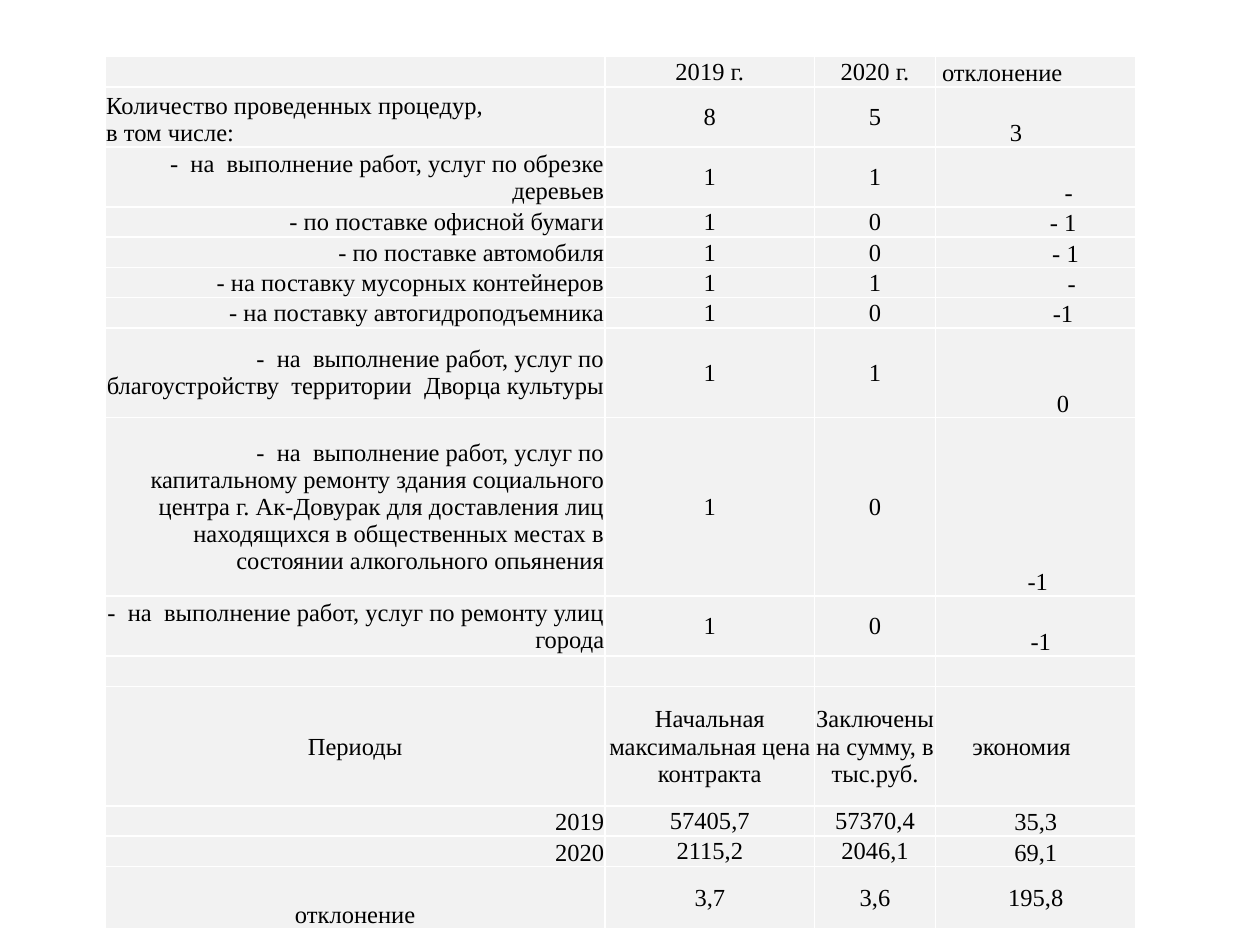
"""Build a slide with one table of procurement figures for 2019 and 2020."""
from lxml import etree
from pptx import Presentation
from pptx.dml.color import RGBColor
from pptx.enum.text import MSO_ANCHOR, PP_ALIGN
from pptx.oxml.ns import qn
from pptx.util import Cm, Pt

LEFT, MID, RIGHT = PP_ALIGN.LEFT, PP_ALIGN.CENTER, PP_ALIGN.RIGHT
CORE, BASE = MSO_ANCHOR.MIDDLE, MSO_ANCHOR.BOTTOM

THEME = {
    "fill": RGBColor.from_string("F2F2F2"),
    "ink": RGBColor.from_string("000000"),
    "rule": "FFFFFF",
    "font": {"name": "Times New Roman", "size": Pt(14), "bold": False},
}
INSET = 0.02
WIDTHS = [10.08, 4.22, 2.44, 4.04]
FORMAT = {
    "margin_right": Cm(INSET),
    "margin_top": Cm(INSET),
    "margin_bottom": Cm(0),
}

ROWS = [
    (0.61, ("", LEFT, CORE), "2019 г.", "2020 г.", ("отклонение", LEFT, BASE, 0.13)),
    (1.21, ("Количество проведенных процедур,\vв том числе:", LEFT, BASE),
     "8", "5", ("3", LEFT, BASE, 1.5)),
    (1.21, ("-  на  выполнение работ, услуг по обрезке деревьев", RIGHT, CORE),
     "1", "1", ("-", MID, BASE, 1.35)),
    (0.61, ("- по поставке офисной бумаги", RIGHT, CORE),
     "1", "0", ("- 1", MID, BASE, 1.12)),
    (0.61, ("- по поставке автомобиля", RIGHT, CORE),
     "1", "0", ("- 1", MID, BASE, 1.22)),
    (0.61, ("- на поставку мусорных контейнеров", RIGHT, CORE),
     "1", "1", ("-", MID, BASE, 1.47)),
    (0.61, ("- на поставку автогидроподъемника", RIGHT, CORE),
     "1", "0", ("-1", MID, BASE, 1.12)),
    (1.8, ("-  на  выполнение работ, услуг по благоустройству  территории  "
           "Дворца культуры", RIGHT, CORE),
     "1", "1", ("0", MID, BASE, 1.12)),
    (3.6, ("-  на  выполнение работ, услуг по капитальному ремонту здания "
           "социального центра г. Ак-Довурак для доставления лиц находящихся "
           "в общественных местах в состоянии алкогольного опьянения", RIGHT, CORE),
     "1", "0", ("-1", MID, BASE, 0.1)),
    (1.21, ("-  на  выполнение работ, услуг по ремонту улиц города", RIGHT, CORE),
     "1", "0", ("-1", MID, BASE, 0.22)),
    (0.61, ("", LEFT, CORE), "", "", ("", LEFT, CORE)),
    (2.4, ("Периоды", MID, CORE), "Начальная максимальная цена контракта",
     "Заключены на сумму, в тыс.руб.", ("экономия", LEFT, CORE, 0.74)),
    (0.61, ("2019", RIGHT, BASE), "57405,7", "57370,4", ("35,3", MID, BASE)),
    (0.61, ("2020", RIGHT, BASE), "2115,2", "2046,1", ("69,1", MID, BASE)),
    (1.25, ("отклонение", MID, BASE), "3,7", "3,6", ("195,8", MID, CORE)),
]


def edge(cell):
    prop = cell._tc.get_or_add_tcPr()
    for side in ("a:lnL", "a:lnR", "a:lnT", "a:lnB"):
        line = etree.SubElement(prop, qn(side), w=str(Pt(1)))
        solid = etree.SubElement(line, qn("a:solidFill"))
        etree.SubElement(solid, qn("a:srgbClr"), val=THEME["rule"])


def write(cell, text, align, anchor, left=INSET):
    for key, value in FORMAT.items():
        setattr(cell, key, value)
    cell.margin_left = Cm(left)
    cell.vertical_anchor = anchor
    edge(cell)
    cell.fill.solid()
    cell.fill.fore_color.rgb = THEME["fill"]
    cell.text = text
    para = cell.text_frame.paragraphs[0]
    para.alignment = align
    for run in para.runs:
        for key, value in THEME["font"].items():
            setattr(run.font, key, value)
        run.font.color.rgb = THEME["ink"]
    if not text:
        size = int(THEME["font"]["size"].pt * 100)
        etree.SubElement(para._p, qn("a:endParaRPr"), sz=str(size))


deck = Presentation()
deck.slide_width, deck.slide_height = Cm(25.4), Cm(19.05)
slide = deck.slides.add_slide(deck.slide_layouts[6])
high = sum(row[0] for row in ROWS)
frame = slide.shapes.add_table(
    len(ROWS), len(WIDTHS), Cm(2.12), Cm(1.13), Cm(sum(WIDTHS)), Cm(high))
table = frame.table
table.first_row = table.horz_banding = False
for col, width in zip(table.columns, WIDTHS):
    col.width = Cm(width)
for row, (height, label, first, second, change) in zip(table.rows, ROWS):
    row.height = Cm(height)
    items = [label, (first, MID, CORE), (second, MID, CORE), change]
    for cell, item in zip(row.cells, items):
        write(cell, *item)

deck.save("out.pptx")
